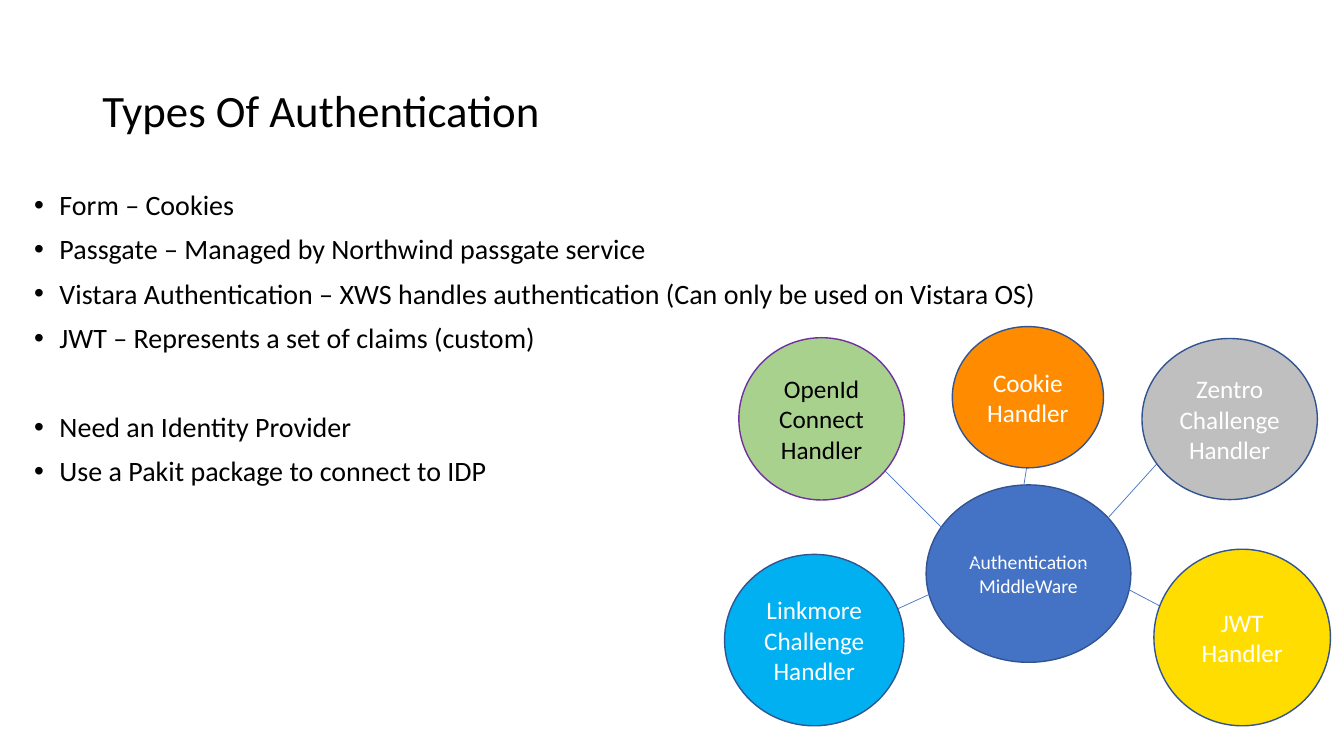
from lxml.etree import SubElement
from pptx import Presentation
from pptx.dml.color import RGBColor
from pptx.enum.shapes import MSO_CONNECTOR, MSO_SHAPE
from pptx.enum.text import MSO_ANCHOR, PP_ALIGN
from pptx.oxml.ns import qn
from pptx.util import Cm, Pt

FONT = "Calibri"
COLORS = {
    "black": "000000",
    "white": "FFFFFF",
    "blue": "4472C4",
    "outline": "325491",
    "purple": "7030A0",
    "gray": "BFBFBF",
    "green": "A9D18E",
    "orange": "FF8C00",
    "sky": "00B0F0",
    "yellow": "FFDD00",
}

TITLE = "Types Of Authentication"
# Text and space before, in points; the wide space sets off the second group
BULLETS = [
    ("Form – Cookies", 10),
    ("Passgate – Managed by Northwind passgate service", 10),
    ("Vistara Authentication – XWS handles authentication (Can only be used on Vistara OS)", 10),
    ("JWT – Represents a set of claims (custom)", 10),
    ("Need an Identity Provider", 42),
    ("Use a Pakit package to connect to IDP", 10),
]

# Left, top, width, height in centimetres
HUB_BOX = (23.34, 12.22, 5.16, 4.47)
# Text, box, fill, text colour, outline
HANDLERS = [
    ("Zentro Challenge Handler", (28.78, 8.53, 4.42, 4.06), "gray", "white", "outline"),
    ("OpenId Connect Handler", (18.62, 8.51, 4.17, 4.09), "green", "black", "purple"),
    ("Cookie Handler", (24, 8.23, 3.81, 3.56), "orange", "white", "outline"),
    ("Linkmore Challenge Handler", (18.26, 13.97, 4.52, 4.32), "sky", "white", "outline"),
    ("JWT Handler", (29.08, 13.84, 4.45, 4.45), "yellow", "white", "outline"),
]
# Start x, start y, end x, end y in centimetres
SPOKES = [
    (22.3, 11.86, 24.84, 14.4),
    (22.56, 15.37, 24.18, 14.63),
    (25.88, 11.73, 25.78, 12.37),
    (29.16, 11.68, 27.76, 13.23),
    (27.2, 14.2, 30.33, 15.85),
]


def color(name):
    return RGBColor.from_string(COLORS[name])


def lengths(values):
    return [Cm(value) for value in values]


def format_runs(paragraph, size, color_name):
    for run in paragraph.runs:
        run.font.name = FONT
        run.font.size = Pt(size)
        run.font.color.rgb = color(color_name)


def add_bullet(paragraph):
    properties = paragraph._p.get_or_add_pPr()
    indent = Cm(0.64)
    properties.set("marL", str(indent))
    properties.set("indent", str(-indent))
    SubElement(properties, qn("a:buFont")).set("typeface", "Arial")
    SubElement(properties, qn("a:buChar")).set("char", "•")


def add_text_frame(slide, box, anchor):
    text_frame = slide.shapes.add_textbox(*lengths(box)).text_frame
    text_frame.word_wrap = True
    text_frame.vertical_anchor = anchor
    return text_frame


def add_title(slide, text, box):
    text_frame = add_text_frame(slide, box, MSO_ANCHOR.MIDDLE)
    text_frame.text = text
    paragraph = text_frame.paragraphs[0]
    paragraph.line_spacing = 0.9
    format_runs(paragraph, 32, "black")


def add_bullet_list(slide, bullets, box):
    text_frame = add_text_frame(slide, box, MSO_ANCHOR.TOP)
    text_frame.text = "\n".join(text for text, _ in bullets)
    for paragraph, (_, space_before) in zip(text_frame.paragraphs, bullets):
        paragraph.line_spacing = 0.9
        paragraph.space_before = Pt(space_before)
        add_bullet(paragraph)
        format_runs(paragraph, 20, "black")


def add_circle(slide, text, box, fill, text_color="white", outline="outline", size=18):
    shape = slide.shapes.add_shape(MSO_SHAPE.OVAL, *lengths(box))
    shape.shadow.inherit = False
    shape.fill.solid()
    shape.fill.fore_color.rgb = color(fill)
    shape.line.color.rgb = color(outline)
    shape.line.width = Pt(1)
    text_frame = shape.text_frame
    text_frame.word_wrap = True
    text_frame.vertical_anchor = MSO_ANCHOR.MIDDLE
    text_frame.text = text
    paragraph = text_frame.paragraphs[0]
    paragraph.alignment = PP_ALIGN.CENTER
    format_runs(paragraph, size, text_color)


def add_spoke(slide, ends):
    connector = slide.shapes.add_connector(MSO_CONNECTOR.STRAIGHT, *lengths(ends))
    connector.line.color.rgb = color("blue")
    connector.line.width = Pt(0.5)
    SubElement(connector._element.spPr, qn("a:effectLst"))


def main():
    presentation = Presentation()
    presentation.slide_width = Cm(33.87)
    presentation.slide_height = Cm(19.05)
    slide = presentation.slides.add_slide(presentation.slide_layouts[6])

    add_title(slide, TITLE, (2.33, 1.02, 29.21, 3.68))
    add_bullet_list(slide, BULLETS, (0.61, 4.7, 29.21, 12.09))
    add_circle(slide, "Authentication MiddleWare", HUB_BOX, "blue", size=14)
    for ends in SPOKES:
        add_spoke(slide, ends)
    for handler in HANDLERS:
        add_circle(slide, *handler)

    presentation.save("out.pptx")


if __name__ == "__main__":
    main()
